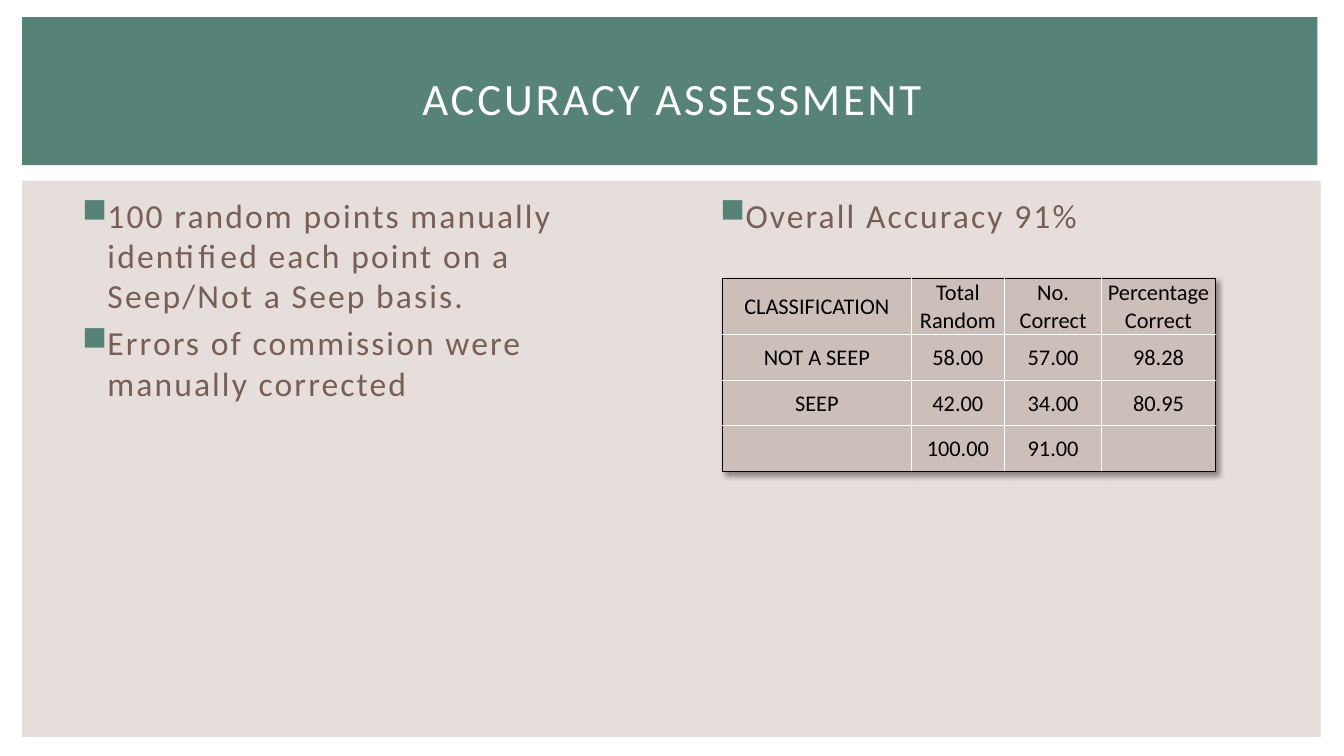
from lxml import etree
from pptx import Presentation
from pptx.dml.color import RGBColor
from pptx.enum.shapes import MSO_SHAPE
from pptx.enum.text import MSO_ANCHOR, PP_ALIGN
from pptx.oxml import parse_xml
from pptx.oxml.ns import qn
from pptx.util import Cm, Pt

RECTANGLE = MSO_SHAPE.RECTANGLE
MIDDLE = MSO_ANCHOR.MIDDLE
CENTER = PP_ALIGN.CENTER
TITLE_ONLY = 5
NAMESPACE = "http://schemas.openxmlformats.org/drawingml/2006/main"
GREEN, BEIGE, TAUPE, BROWN = "568278", "E6DEDB", "CCBEB8", "775F55"
WHITE, BLACK = "FFFFFF", "000000"


def color(hex_string):
    return RGBColor.from_string(hex_string)


def add_run(paragraph, text, size, hex_string, spacing=0):
    run = paragraph.add_run()
    run.text = text
    run.font.name = "Calibri"
    run.font.size = Pt(size)
    run.font.color.rgb = color(hex_string)
    if spacing:
        run.font._element.set("spc", str(int(spacing * 100)))


presentation = Presentation()
presentation.slide_width = Cm(33.87)
presentation.slide_height = Cm(19.05)
slide = presentation.slides.add_slide(presentation.slide_layouts[TITLE_ONLY])
title = slide.shapes.title

panels = [
    (0.56, 4.55, 32.72, 14.02, BEIGE),
    (0.56, 0.43, 32.64, 3.73, GREEN),
]
for left, top, width, height, fill in panels:
    panel = slide.shapes.add_shape(RECTANGLE, Cm(left), Cm(top), Cm(width), Cm(height))
    panel.shadow.inherit = False
    panel.fill.solid()
    panel.fill.fore_color.rgb = color(fill)
    panel.line.fill.background()
    title._element.addprevious(panel._element)

title.left, title.top, title.width, title.height = Cm(1.42), Cm(0.99), Cm(31.04), Cm(2.92)
title.text_frame.vertical_anchor = MIDDLE
paragraph = title.text_frame.paragraphs[0]
paragraph.alignment = CENTER
add_run(paragraph, "ACCURACY ASSESSMENT", 32, WHITE, 2)

bullet_boxes = [
    (1.7, 12.24, [
        "100 random points manually identified each point on a Seep/Not a Seep basis.",
        "Errors of commission were manually corrected",
    ]),
    (17.78, 3.81, ["Overall Accuracy 91%"]),
]
for left, height, bullets in bullet_boxes:
    box = slide.shapes.add_textbox(Cm(left), Cm(4.78), Cm(14.96), Cm(height))
    frame = box.text_frame
    frame.word_wrap = True
    for index, text in enumerate(bullets):
        paragraph = frame.add_paragraph() if index else frame.paragraphs[0]
        paragraph.space_before = Pt(4.8)
        properties = paragraph._p.get_or_add_pPr()
        properties.set("marL", str(Cm(0.76)))
        properties.set("indent", str(Cm(-0.64)))
        bullet_color = etree.SubElement(properties, qn("a:buClr"))
        etree.SubElement(bullet_color, qn("a:srgbClr"), val=GREEN)
        etree.SubElement(properties, qn("a:buChar"), char="■")
        add_run(paragraph, text, 24, BROWN, 1.5)

rows = [
    ["CLASSIFICATION", "Total\nRandom", "No. Correct", "Percentage\nCorrect"],
    ["NOT A SEEP", "58.00", "57.00", "98.28"],
    ["SEEP", "42.00", "34.00", "80.95"],
    ["", "100.00", "91.00", ""],
]
column_widths = [4.75, 2.36, 2.44, 2.87]
row_heights = [1.42, 1.15, 1.15, 1.15]
last_row, last_column = len(rows) - 1, len(column_widths) - 1
table = slide.shapes.add_table(
    len(rows), len(column_widths), Cm(18.21), Cm(7.01),
    Cm(sum(column_widths)), Cm(sum(row_heights)),
).table
table.first_row = False
table.horz_banding = False
table._tbl.tblPr.insert(0, parse_xml(
    f'<a:effectLst xmlns:a="{NAMESPACE}">'
    '<a:outerShdw blurRad="50800" dist="38100" dir="2700000" algn="tl" rotWithShape="0">'
    '<a:srgbClr val="000000"><a:alpha val="40000"/></a:srgbClr>'
    '</a:outerShdw></a:effectLst>'
))
for column, width in zip(table.columns, column_widths):
    column.width = Cm(width)
for row, height in zip(table.rows, row_heights):
    row.height = Cm(height)

for row_index, values in enumerate(rows):
    for column_index, value in enumerate(values):
        cell = table.cell(row_index, column_index)
        cell.fill.solid()
        cell.fill.fore_color.rgb = color(TAUPE)
        cell.vertical_anchor = MIDDLE
        cell.margin_left = cell.margin_right = cell.margin_top = Cm(0.03)
        cell.margin_bottom = Cm(0)
        for index, text in enumerate(value.split("\n") if value else []):
            frame = cell.text_frame
            paragraph = frame.add_paragraph() if index else frame.paragraphs[0]
            paragraph.alignment = CENTER
            add_run(paragraph, text, 16, BLACK)
        outer_sides = [
            ("lnL", column_index == 0),
            ("lnR", column_index == last_column),
            ("lnT", row_index == 0),
            ("lnB", row_index == last_row),
        ]
        for position, (side, is_outer) in enumerate(outer_sides):
            line_width, line_color = (Pt(1), BLACK) if is_outer else (Pt(0.5), WHITE)
            cell._tc.tcPr.insert(position, parse_xml(
                f'<a:{side} xmlns:a="{NAMESPACE}" w="{line_width}"><a:solidFill>'
                f'<a:srgbClr val="{line_color}"/></a:solidFill></a:{side}>'
            ))

presentation.save("out.pptx")
